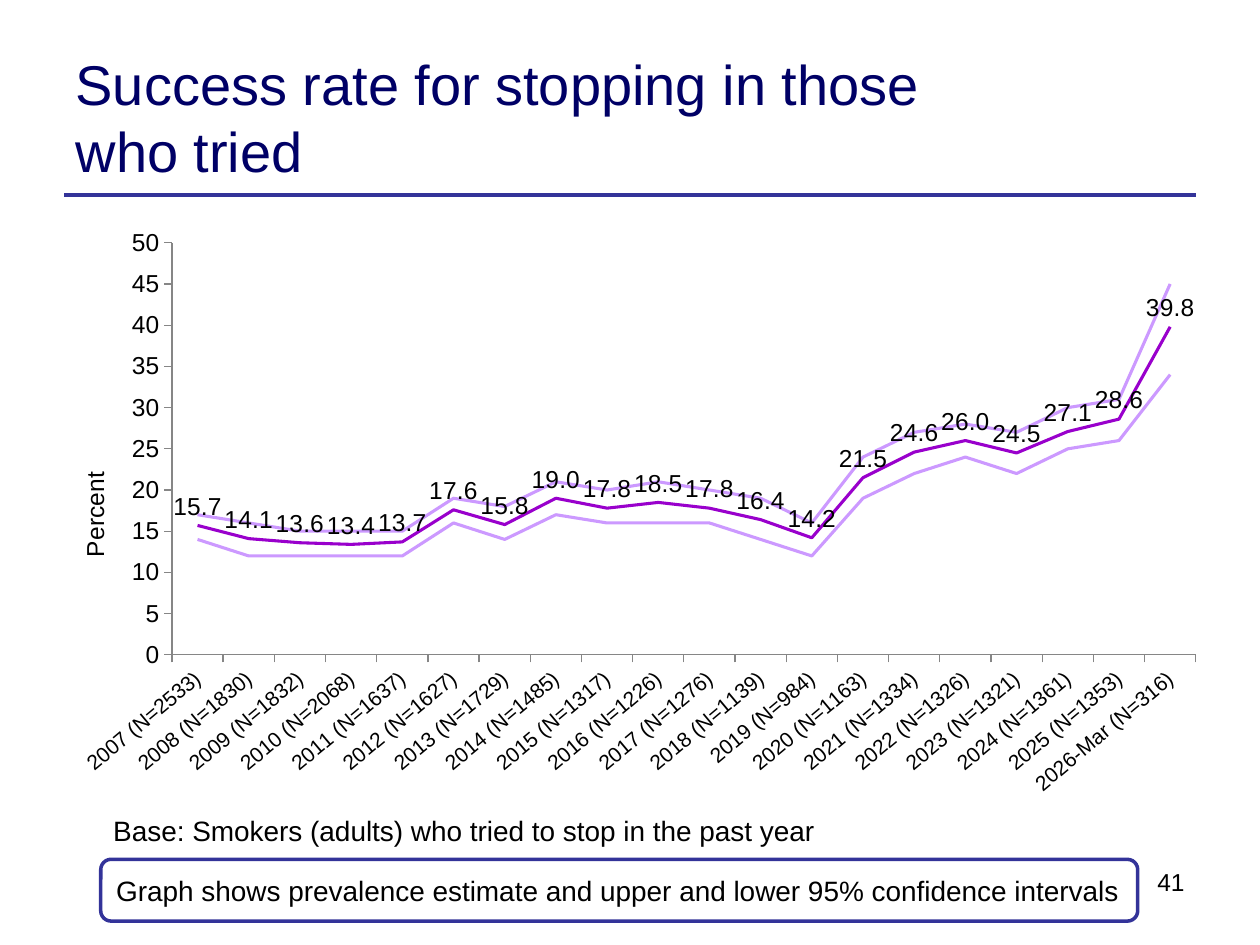
from lxml import etree
from pptx import Presentation, util as u
from pptx.chart.data import CategoryChartData
from pptx.dml.color import RGBColor
from pptx.enum import chart as c, shapes, text
from pptx.oxml import ns

W, H = u.Inches(10), u.Inches(7.5)
NAVY, RULE, PURPLE, LILAC, GREY = "000066", "333399", "9900CC", "CC99FF", "868686"


def style(font, size, colour="000000"):
    values = {"name": "Arial", "size": u.Pt(size), "bold": False}
    for key, value in values.items():
        setattr(font, key, value)
    font.color.rgb = RGBColor.from_string(colour)


def set_layout(parent, index, **values):
    """Give a chart part a manual layout as shares of the chart's size."""
    for old in parent.findall(ns.qn("c:layout")):
        parent.remove(old)
    layout = etree.Element(ns.qn("c:layout"))
    manual = etree.SubElement(layout, ns.qn("c:manualLayout"))
    for tag, value in values.items():
        etree.SubElement(manual, ns.qn(f"c:{tag}")).set("val", str(value))
    parent.insert(index, layout)


deck = Presentation()
deck.slide_width, deck.slide_height = W, H
page = deck.slides.add_slide(deck.slide_layouts[5])

# Title and rule
title = page.shapes.title
title.left, title.top = int(W * 0.05), int(H * 0.04)
title.width, title.height = int(W * 0.781), u.Inches(1.25)
title.text_frame.text = "Success rate for stopping in those who tried"
title.text_frame.vertical_anchor = text.MSO_ANCHOR.MIDDLE
title.text_frame.auto_size = text.MSO_AUTO_SIZE.NONE
para = title.text_frame.paragraphs[0]
para.alignment = text.PP_ALIGN.LEFT
style(para.runs[0].font, 32, NAVY)

rule = page.shapes.add_connector(shapes.MSO_CONNECTOR.STRAIGHT, int(W * 0.051),
                                 u.Inches(1.55), int(W * 0.949), u.Inches(1.55))
rule.line.color.rgb = RGBColor.from_string(RULE)
rule.line.width = u.Pt(2.25)
etree.SubElement(rule._element.spPr, ns.qn("a:effectLst"))

# Chart: estimate with upper and lower confidence limits
samples = [2533, 1830, 1832, 2068, 1637, 1627, 1729, 1485, 1317, 1226,
           1276, 1139, 984, 1163, 1334, 1326, 1321, 1361, 1353, 316]
estimate = [15.7, 14.1, 13.6, 13.4, 13.7, 17.6, 15.8, 19, 17.8, 18.5,
            17.8, 16.4, 14.2, 21.5, 24.6, 26, 24.5, 27.1, 28.6, 39.8]
upper = [17, 16, 15, 15, 15, 19, 18, 21, 20, 21,
         20, 19, 16, 24, 27, 28, 27, 30, 31, 45]
lower = [14, 12, 12, 12, 12, 16, 14, 17, 16, 16,
         16, 14, 12, 19, 22, 24, 22, 25, 26, 34]
data = CategoryChartData()
data.categories = [f"{year}{'-Mar' if year == 2026 else ''} (N={count})"
                   for year, count in enumerate(samples, 2007)]
for number, values in enumerate((estimate, upper, lower), 1):
    data.add_series(f"Series {number}", values)

chart = page.shapes.add_chart(c.XL_CHART_TYPE.LINE, int(W * 0.05), u.Inches(1.75),
                              int(W * 0.91), u.Inches(4.66), data).chart
chart.has_legend = chart.has_title = False
style(chart.font, 18)
plot = chart.plots[0]
plot.vary_by_categories = False
for series, colour in zip(plot.series, (PURPLE, LILAC, LILAC)):
    series.smooth = False
    series.marker.style = c.XL_MARKER_STYLE.NONE
    series.format.line.color.rgb = RGBColor.from_string(colour)
    series.format.line.width = u.Pt(1.75)

labels = plot.series[0].data_labels
label_format = {"show_value": True, "position": c.XL_LABEL_POSITION.ABOVE,
                "number_format": "#,##0.0", "number_format_is_linked": False}
for key, value in label_format.items():
    setattr(labels, key, value)
style(labels.font, 14)

for axis, size in ((chart.category_axis, 12), (chart.value_axis, 14)):
    axis.has_major_gridlines = False
    axis.major_tick_mark = c.XL_TICK_MARK.OUTSIDE
    axis.format.line.color.rgb = RGBColor.from_string(GREY)
    style(axis.tick_labels.font, size)
chart.category_axis._element.find(ns.qn("c:txPr")).find(
    ns.qn("a:bodyPr")).set("rot", str(-40 * 60000))

scale = chart.value_axis
scale.minimum_scale, scale.maximum_scale, scale.major_unit = 0, 50, 5
scale.tick_labels.number_format = "0"
scale.tick_labels.number_format_is_linked = False
scale.axis_title.text_frame.text = "Percent"
style(scale.axis_title.text_frame.paragraphs[0].runs[0].font, 14)
set_layout(scale.axis_title._element, 1, xMode="edge", yMode="edge", x=0.01, y=0.42)
set_layout(chart._chartSpace.chart.plotArea, 0, layoutTarget="inner", xMode="edge",
           yMode="edge", x=0.095, y=0.038, w=0.893, h=0.702)

# Page number, framed note and base
number = page.shapes.add_textbox(int(W * 0.673), u.Inches(6.83), int(W * 0.277), u.Inches(0.52))
note = page.shapes.add_shape(shapes.MSO_SHAPE.ROUNDED_RECTANGLE, int(W * 0.08),
                             u.Inches(6.82), int(W * 0.823), u.Inches(0.49))
note.shadow.inherit = False
note.fill.solid()
note.fill.fore_color.rgb = RGBColor.from_string("FFFFFF")
note.line.color.rgb = RGBColor.from_string(RULE)
note.line.width = u.Pt(2)
note.text_frame.vertical_anchor = text.MSO_ANCHOR.MIDDLE
base = page.shapes.add_textbox(int(W * 0.08), u.Inches(6.41), int(W * 0.585), u.Inches(0.37))

for box, words, size, align, wrap in (
    (number, "41", 14, text.PP_ALIGN.RIGHT, True),
    (note, "Graph shows prevalence estimate and upper and lower 95% confidence intervals",
     16, text.PP_ALIGN.LEFT, True),
    (base, "Base: Smokers (adults) who tried to stop in the past year",
     16, text.PP_ALIGN.LEFT, False),
):
    box.text_frame.text = words
    box.text_frame.word_wrap = wrap
    para = box.text_frame.paragraphs[0]
    para.alignment = align
    style(para.runs[0].font, size)
base.text_frame.auto_size = text.MSO_AUTO_SIZE.SHAPE_TO_FIT_TEXT

deck.save("out.pptx")
